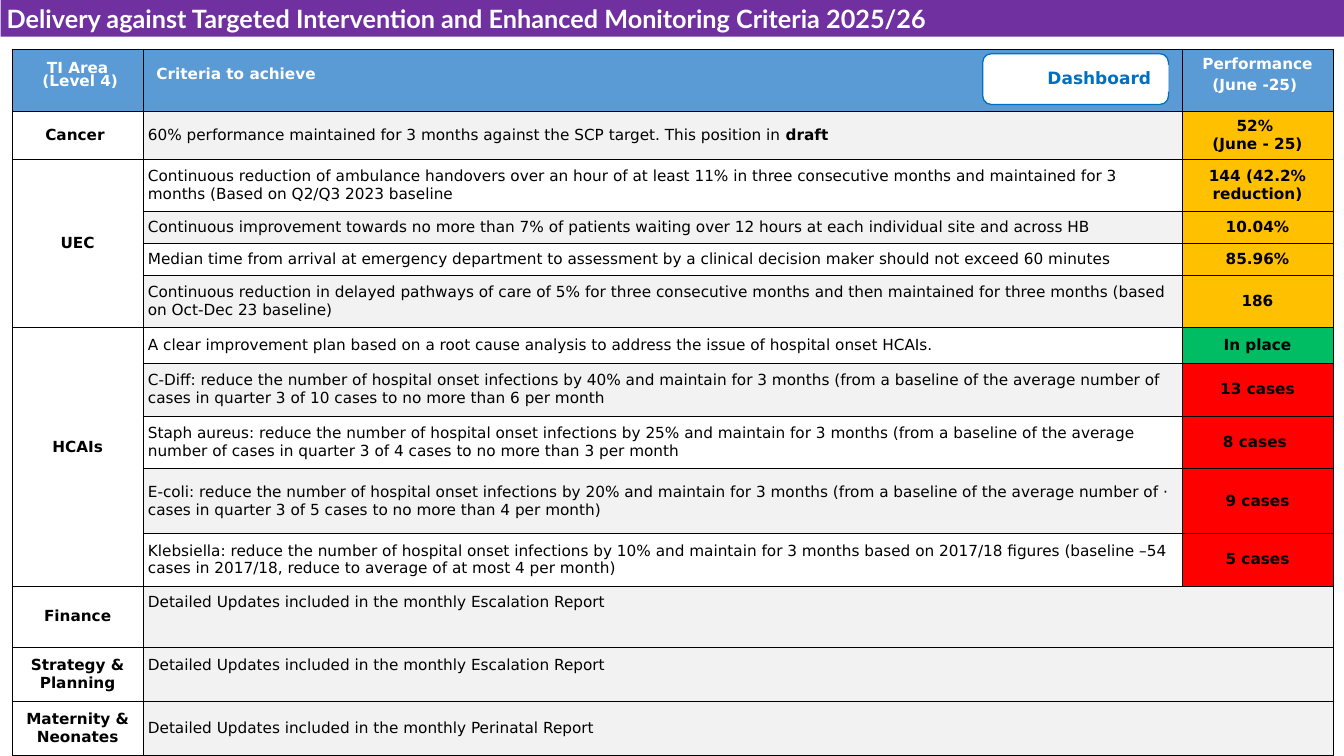
"""Build the targeted intervention and enhanced monitoring criteria slide."""
from dataclasses import dataclass

from lxml import etree
from pptx import Presentation
from pptx.dml.color import RGBColor
from pptx.enum.shapes import MSO_SHAPE
from pptx.enum.text import MSO_ANCHOR, PP_ALIGN
from pptx.oxml.ns import qn
from pptx.util import Inches, Pt

RECTANGLE, ROUNDED = MSO_SHAPE.RECTANGLE, MSO_SHAPE.ROUNDED_RECTANGLE
LEFT, CENTER, JUSTIFY = PP_ALIGN.LEFT, PP_ALIGN.CENTER, PP_ALIGN.JUSTIFY
TOP, MIDDLE = MSO_ANCHOR.TOP, MSO_ANCHOR.MIDDLE

SLIDE_WIDTH, SLIDE_HEIGHT = Inches(21.99), Inches(12.37)
BODY_FONT, TITLE_FONT = "DejaVu Sans", "Lato"
WHITE, BLACK, BAND = "FFFFFF", "000000", "F2F2F2"
HEADER_BLUE, PURPLE, BUTTON_BLUE = "5B9BD5", "7030A0", "0070C0"
AMBER, GREEN, RED = "FFC000", "00BC62", "FF0000"
ALL_SIDES = "LRTB"
LIFT = 0.3

COLUMN_SHARES = (9.73, 77.31, 11.23)
TABLE_LEFT, TABLE_TOP, HEADER_SHARE = 0.91, 6.47, 8.25


@dataclass(frozen=True)
class Box:
    """Position and size in percent of the slide."""
    left: float
    top: float
    width: float
    height: float


@dataclass(frozen=True)
class Style:
    """Look of a piece of text."""
    size: float = 18
    color: str = BLACK
    bold: bool = True
    align: PP_ALIGN = CENTER
    font: str = BODY_FONT


@dataclass(frozen=True)
class Criterion:
    """One table row; the height is in percent of the slide."""
    height: float
    text: str
    result: str = ""
    color: str = BAND
    bold_ending: str = ""
    sides: str = ALL_SIDES
    lift: float = 0


@dataclass(frozen=True)
class Area:
    """An area name that spans its criteria."""
    name: str
    criteria: tuple[Criterion, ...]
    lift: float = 0


ESCALATION = "Detailed Updates included in the monthly Escalation Report"
INFECTIONS = "reduce the number of hospital onset infections by"
BASELINE = "and maintain for 3 months (from a baseline of the average number of"
AREAS = (
    Area("Cancer ", (
        Criterion(6.39, "60% performance maintained for 3 months against the SCP target. This position in ",
                  "52% \n(June - 25)", AMBER, "draft"),)),
    Area("UEC", (
        Criterion(6.87, "Continuous reduction of ambulance handovers over an hour of at least 11% in three consecutive "
                  "months and maintained for 3 months (Based on Q2/Q3 2023 baseline", "144 (42.2% reduction)", AMBER),
        Criterion(4.2, "Continuous improvement towards no more than 7% of patients waiting over 12 hours at each "
                  "individual site and across HB", "10.04%", AMBER),
        Criterion(4.2, "Median time from arrival at emergency department to assessment by a clinical decision maker "
                  "should not exceed 60 minutes", "85.96%", AMBER),
        Criterion(6.87, "Continuous reduction in delayed pathways of care of 5% for three consecutive months and then "
                  "maintained for three months (based on Oct-Dec 23 baseline)", "186", AMBER))),
    Area("HCAIs", (
        Criterion(4.77, "A clear improvement plan based on a root cause analysis to address the issue of hospital "
                  "onset HCAIs.", "In place", GREEN),
        Criterion(7.03, f"C-Diff: {INFECTIONS} 40% {BASELINE} cases in quarter 3 of 10 cases to no more than "
                  "6 per month", "13 cases", RED),
        Criterion(6.95, f"Staph aureus: {INFECTIONS} 25% {BASELINE} cases in quarter 3 of 4 cases to no more than "
                  "3 per month", "8 cases ", RED),
        Criterion(8.57, f"E-coli: {INFECTIONS} 20% {BASELINE} · cases in quarter 3 of 5 cases to no more than "
                  "4 per month)", "9 cases", RED),
        Criterion(6.95, f"Klebsiella: {INFECTIONS} 10% and maintain for 3 months based on 2017/18 figures "
                  "(baseline –54 cases in 2017/18, reduce to average of at most 4 per month)", "5 cases", RED)),
         lift=LIFT),
    Area("Finance", (Criterion(4.2, ESCALATION, sides="LRT"), Criterion(3.88, "", sides="LRB"))),
    Area("Strategy & Planning", (Criterion(7.19, ESCALATION, lift=LIFT),)),
    Area("Maternity & Neonates", (
        Criterion(7.19, "Detailed Updates included in the monthly Perinatal Report"),)),
)
HEADINGS = (("TI Area\n (Level 4)", CENTER, 8), ("Criteria to achieve", LEFT, 0),
            ("Performance\n(June -25) ", CENTER, 16))


def across(share: float) -> int:
    """Turn a percentage of the slide width into a length."""
    return round(SLIDE_WIDTH * share / 100)


def down(share: float) -> int:
    """Turn a percentage of the slide height into a length."""
    return round(SLIDE_HEIGHT * share / 100)


def paint(target, color: str) -> None:
    """Give a fill a solid colour."""
    target.solid()
    target.fore_color.rgb = RGBColor.from_string(color)


def format_run(run, style: Style) -> None:
    """Apply a text style to one run."""
    run.font.name, run.font.size, run.font.bold = style.font, Pt(style.size), style.bold
    run.font.color.rgb = RGBColor.from_string(style.color)


def write(text_frame, text: str, style: Style) -> None:
    """Set text, then format every paragraph and run."""
    text_frame.text = text
    for paragraph in text_frame.paragraphs:
        paragraph.alignment = style.align
        for run in paragraph.runs:
            format_run(run, style)


def add_box(slide, kind: MSO_SHAPE, box: Box, fill: str, line: str = ""):
    """Draw a flat filled shape, outlined if a line colour is given."""
    shape = slide.shapes.add_shape(kind, across(box.left), down(box.top), across(box.width), down(box.height))
    shape.shadow.inherit = False
    paint(shape.fill, fill)
    if line:
        paint(shape.line.fill, line)
        shape.line.width = Pt(1.5)
    else:
        shape.line.fill.background()
    return shape


def add_label(slide, box: Box, fill: str, text: str, style: Style) -> None:
    """Draw a filled rectangle with top-anchored text."""
    shape = add_box(slide, RECTANGLE, box, fill)
    shape.text_frame.word_wrap = True
    shape.text_frame.vertical_anchor = TOP
    write(shape.text_frame, text, style)


def fill_cell(cell, text: str, style: Style, fill: str, sides: str = ALL_SIDES,
              margins: tuple[float, float] = (0.08, 0.08), lift: float = 0) -> None:
    """Write a cell with its borders, fill and margins."""
    write(cell.text_frame, text, style)
    cell.vertical_anchor = MIDDLE
    cell.margin_left = cell.margin_right = Inches(margins[0])
    cell.margin_top, cell.margin_bottom = Inches(margins[1]), Inches(margins[1] + lift)
    properties = cell._tc.get_or_add_tcPr()
    for side in ALL_SIDES:
        border = etree.SubElement(properties, qn(f"a:ln{side}"), w=str(Pt(1)))
        if side in sides:
            solid = etree.SubElement(border, qn("a:solidFill"))
            etree.SubElement(solid, qn("a:srgbClr"), val=BLACK)
        else:
            etree.SubElement(border, qn("a:noFill"))
    paint(cell.fill, fill)


def add_criteria_table(slide) -> None:
    """Build the header row and all areas with their criteria."""
    heights = [HEADER_SHARE] + [criterion.height for area in AREAS for criterion in area.criteria]
    table = slide.shapes.add_table(len(heights), len(COLUMN_SHARES), across(TABLE_LEFT), down(TABLE_TOP),
                                   across(sum(COLUMN_SHARES)), down(sum(heights))).table
    table.first_row = table.horz_banding = False
    for column, share in zip(table.columns, COLUMN_SHARES):
        column.width = across(share)
    for row, share in zip(table.rows, heights):
        row.height = down(share)
    for column, (heading, align, gap) in enumerate(HEADINGS):
        cell = table.cell(0, column)
        fill_cell(cell, heading, Style(color=WHITE, align=align), HEADER_BLUE, margins=(0.22, 0.11))
        for index, paragraph in enumerate(cell.text_frame.paragraphs):
            paragraph.line_spacing, paragraph.space_before = Pt(8), Pt(gap * index)
    row = 1
    for area in AREAS:
        first = row
        for criterion in area.criteria:
            name = area.name if row == first else ""
            banded = not criterion.result or row % 2
            fill_cell(table.cell(row, 0), name, Style(), WHITE, lift=area.lift)
            body = table.cell(row, 1)
            fill_cell(body, criterion.text, Style(bold=False, align=LEFT), BAND if banded else WHITE,
                      criterion.sides, lift=criterion.lift)
            if criterion.bold_ending:
                run = body.text_frame.paragraphs[0].add_run()
                run.text = criterion.bold_ending
                format_run(run, Style())
            fill_cell(table.cell(row, 2), criterion.result, Style(), criterion.color, criterion.sides)
            if not criterion.result:
                body.merge(table.cell(row, 2))
            row += 1
        if row - first > 1:
            table.cell(first, 0).merge(table.cell(row - 1, 0))


def main() -> None:
    """Create and save the slide."""
    presentation = Presentation()
    presentation.slide_width, presentation.slide_height = SLIDE_WIDTH, SLIDE_HEIGHT
    slide = presentation.slides.add_slide(presentation.slide_layouts[6])
    add_criteria_table(slide)
    add_label(slide, Box(0.05, 0, 99.95, 4.85), PURPLE,
              "Delivery against Targeted Intervention and Enhanced Monitoring Criteria 2025/26",
              Style(29.7, WHITE, align=JUSTIFY, font=TITLE_FONT))
    add_box(slide, ROUNDED, Box(73.12, 7.11, 13.82, 6.71), WHITE, BUTTON_BLUE)
    add_label(slide, Box(77.49, 8.57, 9.46, 3.56), WHITE, "Dashboard", Style(20, BUTTON_BLUE, align=LEFT))
    presentation.save("out.pptx")


if __name__ == "__main__":
    main()
